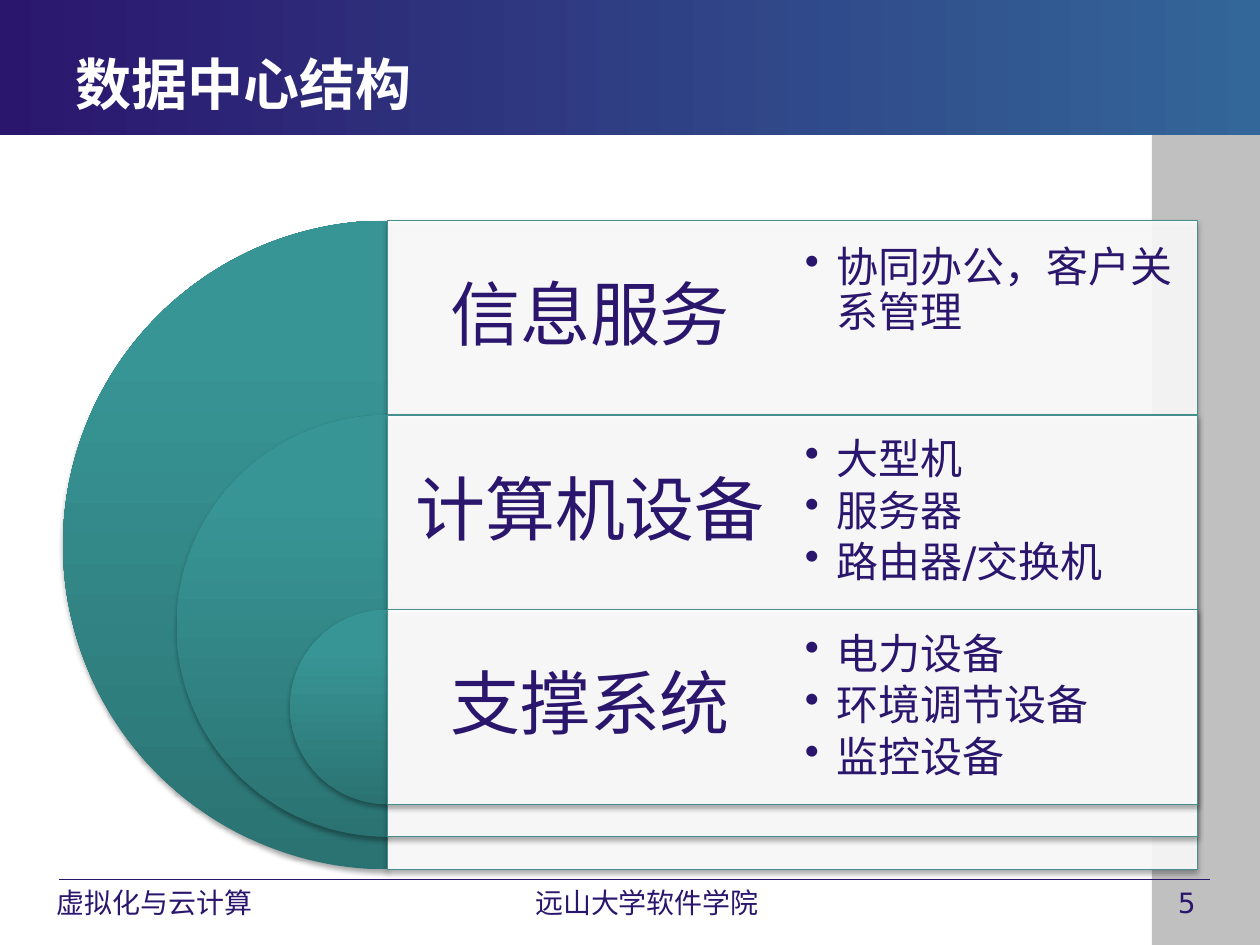
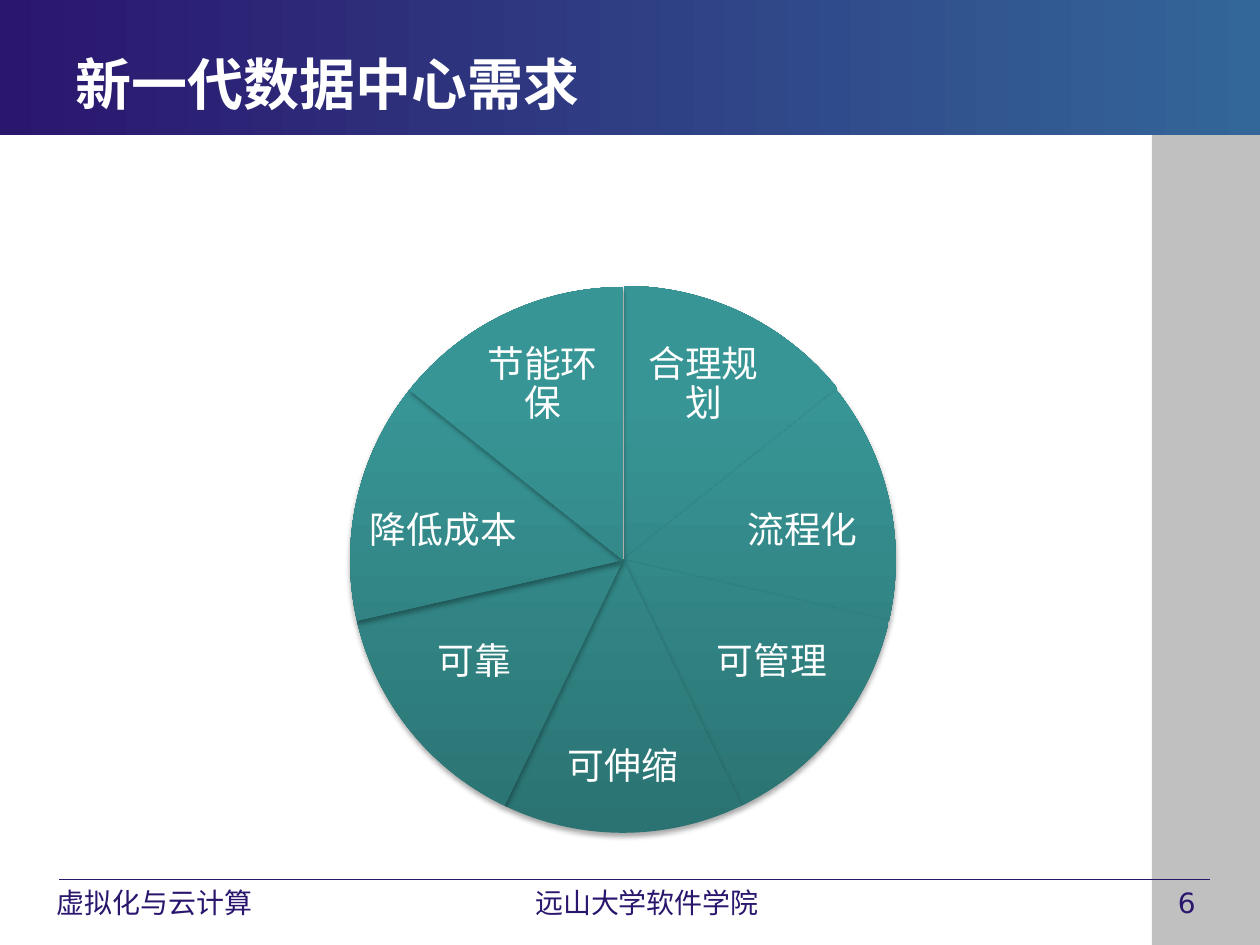
from pptx import Presentation
from pptx.dml.color import RGBColor
from pptx.enum.shapes import MSO_CONNECTOR, MSO_SHAPE
from pptx.enum.text import MSO_ANCHOR, PP_ALIGN
from pptx.oxml import parse_xml
from pptx.oxml.ns import nsdecls, qn
from pptx.util import Pt

# Content
COURSE = "虚拟化与云计算 "
SCHOOL = "远山大学软件学院"
LAYERS = [
    ("信息服务", ["协同办公，客户关系管理"]),
    ("计算机设备", ["大型机", "服务器", "路由器/交换机"]),
    ("支撑系统", ["电力设备", "环境调节设备", "监控设备"]),
]
NEEDS = ["合理规划", "流程化", "可管理", "可伸缩", "可靠", "降低成本", "节能环保"]

# Style
NAVY = RGBColor(0x2B, 0x16, 0x6E)
BLUE = RGBColor(0x33, 0x66, 0x99)
GREY = RGBColor(0xC0, 0xC0, 0xC0)
WHITE = RGBColor(0xFF, 0xFF, 0xFF)
EDGE = RGBColor(0x45, 0x8F, 0x8F)
TEAL = [(0, RGBColor(0x2B, 0x73, 0x73)),
        (80, RGBColor(0x38, 0x95, 0x95)),
        (100, RGBColor(0x37, 0x98, 0x98))]
FONT = "DejaVu Sans"
CENTER = {"alignment": PP_ALIGN.CENTER}
DENSE = {"line_spacing": 0.9}

WIDE, HIGH = 720, 540
BAND = 77
RULE = 502.6

# Layer slide: half discs share one centre line, each row one step lower
MID, TOP, STEP = 221.4, 126, 111.2
DISC, SHRINK = 370.8, 129.8
PANEL = 463

# Wheel slide: labels on the right side, mirrored to the left
HUB = (356, 320)
WHEEL = 311.8
SPOTS = [(46, 220, 85, 54), (102.6, 303.8, 91, 57.6),
         (85, 378.7, 81.4, 59), (0, 438.5, 83.5, 59)]
SPOTS += [(-x, y, w, h) for x, y, w, h in SPOTS[2::-1]]


def assign(item, values):
    for name, value in values.items():
        setattr(item, name, value)


def write(slide, box, lines, size, color, inset=(7.2, 3.6, 7.2, 3.6),
          anchor=MSO_ANCHOR.MIDDLE, bold=False, gap=0, para={}, dots=False):
    """Add a text box; gap is the space after, as a share of the size."""
    frame = slide.shapes.add_textbox(*map(Pt, box)).text_frame
    sides = ("margin_left", "margin_top", "margin_right", "margin_bottom")
    assign(frame, {"word_wrap": True, "vertical_anchor": anchor,
                   **dict(zip(sides, map(Pt, inset)))})
    for i, line in enumerate(lines):
        part = frame.add_paragraph() if i else frame.paragraphs[0]
        assign(part, {"space_after": Pt(size * gap), **para})
        run = part.add_run()
        run.text = line
        assign(run.font, {"name": FONT, "size": Pt(size), "bold": bold})
        run.font.color.rgb = color
        if dots:
            props = part._p.get_or_add_pPr()
            props.set("marL", str(Pt(18)))
            props.set("indent", str(-Pt(18)))
            props.append(parse_xml(f'<a:buChar {nsdecls("a")} char="•"/>'))


def shade(shape, stops, angle):
    shape.fill.gradient()
    shape.fill.gradient_angle = angle
    group = shape._element.spPr.find(".//" + qn("a:gsLst"))
    group.clear()
    for place, color in stops:
        group.append(parse_xml(
            f'<a:gs {nsdecls("a")} pos="{place * 1000}">'
            f'<a:srgbClr val="{color}"/></a:gs>'))


def block(slide, kind, box):
    shape = slide.shapes.add_shape(kind, *map(Pt, box))
    shape.shadow.inherit = False
    shape.line.fill.background()
    return shape


def cast(shape):
    """Give the shape a soft shadow below."""
    shape._element.spPr.find(qn("a:effectLst")).append(parse_xml(
        f'<a:outerShdw {nsdecls("a")} blurRad="{Pt(3.1)}" dist="{Pt(1.8)}" '
        'dir="5400000" rotWithShape="0"><a:srgbClr val="000000">'
        '<a:alpha val="35000"/></a:srgbClr></a:outerShdw>'))


def wedge(slide, box, start, end):
    """Add a teal pie slice between two angles in degrees."""
    shape = block(slide, MSO_SHAPE.PIE, box)
    for i, angle in enumerate((start, end)):
        shape.adjustments[i] = angle % 360 * 0.6
    shade(shape, TEAL, 90)
    cast(shape)


def panel(slide, box):
    """Add a slightly clear white box with a teal edge."""
    shape = block(slide, MSO_SHAPE.RECTANGLE, box)
    shape.fill.solid()
    shape.fill.fore_color.rgb = WHITE
    tint = shape._element.spPr.find(qn("a:solidFill") + "/" + qn("a:srgbClr"))
    tint.append(parse_xml(f'<a:alpha {nsdecls("a")} val="90000"/>'))
    shape.line.color.rgb = EDGE
    shape.line.width = Pt(0.75)
    cast(shape)


def start(deck, title, number):
    """Add a slide with the side bar, band, footer and title."""
    slide = deck.slides.add_slide(deck.slide_layouts[6])
    side = block(slide, MSO_SHAPE.RECTANGLE, (658.2, BAND, 61.8, HIGH - BAND))
    side.fill.solid()
    side.fill.fore_color.rgb = GREY
    rule = slide.shapes.add_connector(
        MSO_CONNECTOR.STRAIGHT, *map(Pt, (33.8, RULE, 691.2, RULE)))
    rule.line.color.rgb = NAVY
    rule.line.width = Pt(0.75)
    rule._element.spPr.append(parse_xml(f'<a:effectLst {nsdecls("a")}/>'))
    band = block(slide, MSO_SHAPE.RECTANGLE, (0, 0, WIDE, BAND))
    shade(band, [(0, NAVY), (100, BLUE)], 0)
    for text, left, width, para in ((str(number), 666, 51, {}),
                                    (COURSE, 20.2, 139.7, CENTER),
                                    (SCHOOL, 288.7, 162, CENTER)):
        write(slide, (left, RULE, width, 25.2), [text], 16, NAVY,
              anchor=MSO_ANCHOR.TOP, para=para)
    write(slide, (36, 25.2, 486, 44.6), [title], 32, WHITE, bold=True)
    return slide


def layers(deck):
    slide = start(deck, "数据中心结构", 5)
    half = PANEL / 2
    for i, (name, _) in enumerate(LAYERS):
        top, size = TOP + i * STEP, DISC - i * SHRINK
        wedge(slide, (MID - size / 2, top, size, size), 90, 270)
        panel(slide, (MID, top, PANEL, size))
        write(slide, (MID, top, half, STEP), [name], 40, NAVY,
              inset=[12] * 4, gap=0.35, para={**CENTER, **DENSE})
    for i, (_, items) in enumerate(LAYERS):
        lift = 30 if len(items) == 1 else 0
        write(slide, (MID + half, TOP + i * STEP, half, STEP), items, 24, NAVY,
              inset=(7.2, 7.2, 7.2, 7.2 + lift), gap=0.15, para=DENSE, dots=True)


def wheel(deck):
    slide = start(deck, "新一代数据中心需求", 6)
    turn = 360 / len(NEEDS)
    left, top = (c - WHEEL / 2 for c in HUB)
    for i, (need, (x, y, w, h)) in enumerate(zip(NEEDS, SPOTS)):
        shift = 0 if i else 0.7
        angle = 270 + i * turn
        wedge(slide, (left + shift, top - shift, WHEEL, WHEEL),
              angle, angle + turn)
        write(slide, (HUB[0] + x - w / 2, y - h / 2, w, h), [need], 21, WHITE,
              inset=[2.1] * 4, gap=0.35, para={**CENTER, **DENSE})


def main():
    deck = Presentation()
    assign(deck, {"slide_width": Pt(WIDE), "slide_height": Pt(HIGH)})
    layers(deck)
    wheel(deck)
    deck.save("out.pptx")


if __name__ == "__main__":
    main()
